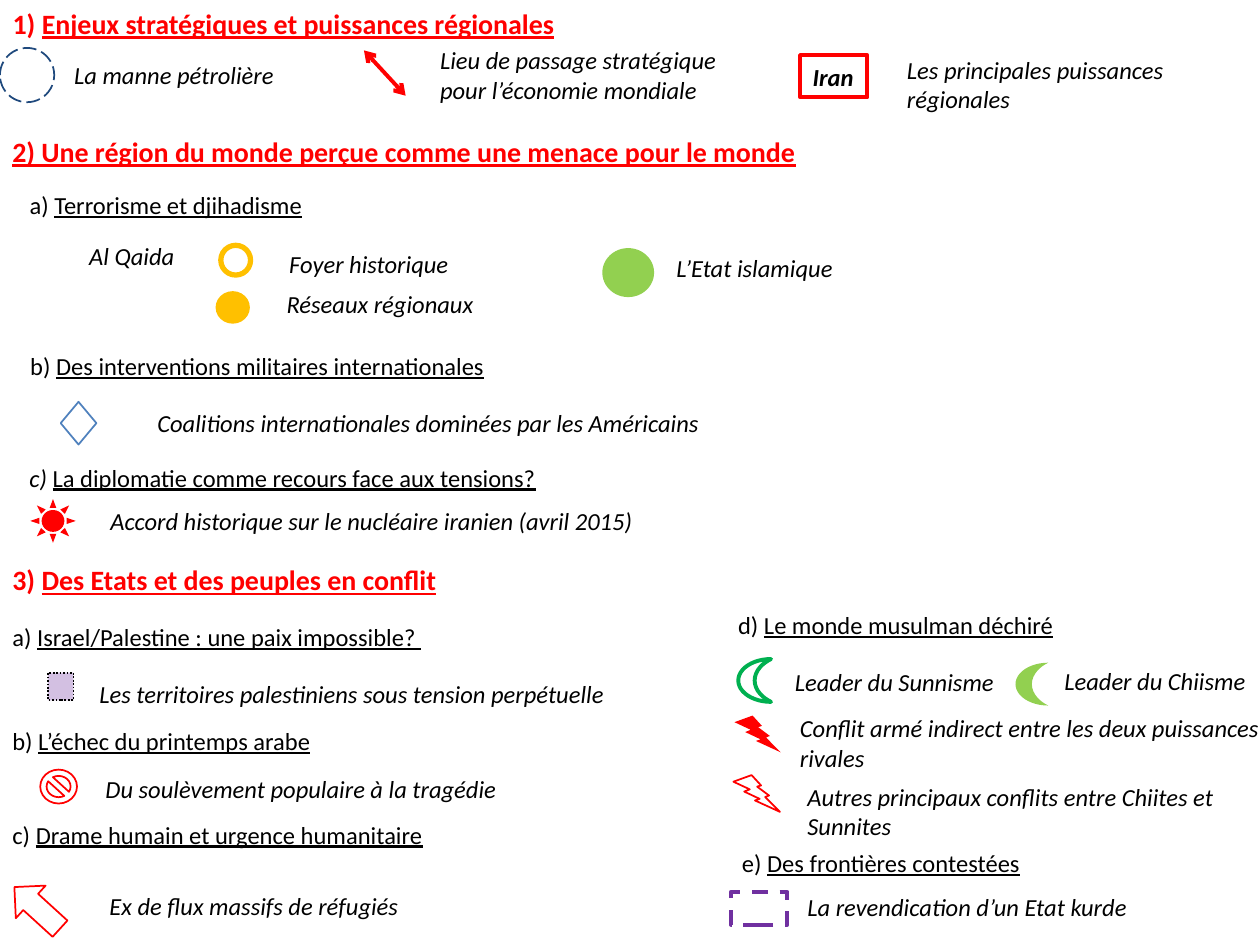
import lxml.etree
import pptx
import pptx.dml.color
import pptx.enum.dml
import pptx.enum.shapes
import pptx.enum.text
import pptx.oxml.ns
import pptx.util

Pt = pptx.util.Pt
RGBColor = pptx.dml.color.RGBColor
SHAPE = pptx.enum.shapes.MSO_SHAPE
DASH = pptx.enum.dml.MSO_LINE
qn = pptx.oxml.ns.qn

BLACK = RGBColor(0x00, 0x00, 0x00)
RED = RGBColor(0xFF, 0x00, 0x00)
NAVY = RGBColor(0x1F, 0x49, 0x7D)
BLUE = RGBColor(0x4F, 0x81, 0xBD)
AMBER = RGBColor(0xFF, 0xC0, 0x00)
LIME = RGBColor(0x92, 0xD0, 0x50)
GREEN = RGBColor(0x00, 0xB0, 0x50)
PURPLE = RGBColor(0x70, 0x30, 0xA0)

FONT = "Calibri"
TEXT_SIZE, HEADING_SIZE = 14, 16
LINE_HEIGHT, TWO_LINES, HEADING_HEIGHT = 24.2, 41.2, 26.6


def place(shape, box, left, top, width, height):
    """Set the shape's position, counted from the corner of the box."""
    shape.left, shape.top = Pt(box[0] + left), Pt(box[1] + top)
    shape.width, shape.height = Pt(width), Pt(height)


def style(paragraph, size=TEXT_SIZE, color=BLACK, bold=False, italic=False):
    font = paragraph.font
    font.name, font.size, font.bold, font.italic = FONT, Pt(size), bold, italic
    font.color.rgb = color


def add_text(slide, box, left, top, width, height=LINE_HEIGHT, wrap=False):
    shape = slide.shapes.add_textbox(0, 0, 0, 0)
    place(shape, box, left, top, width, height)
    shape.text_frame.word_wrap = wrap
    return shape.text_frame


def add_label(slide, box, left, top, width, text, height=LINE_HEIGHT, wrap=False):
    """Add the italic explanation of a symbol."""
    frame = add_text(slide, box, left, top, width, height, wrap)
    frame.text = text
    for paragraph in frame.paragraphs:
        style(paragraph, italic=True)


def write_numbered(paragraph, number, text):
    paragraph.add_run().text = number + " "
    run = paragraph.add_run()
    run.text = text
    run.font.underline = True


def add_subheading(slide, box, left, top, width, number, text):
    paragraph = add_text(slide, box, left, top, width).paragraphs[0]
    style(paragraph)
    write_numbered(paragraph, number, text)
    return paragraph


def add_heading(slide, box, width, number, text):
    paragraph = add_text(slide, box, 0, 0, width, HEADING_HEIGHT).paragraphs[0]
    style(paragraph, HEADING_SIZE, RED, bold=True)
    write_numbered(paragraph, number, text)
    return paragraph


def add_symbol(slide, box, kind, left, top, width, height,
               fill=None, line=None, weight=1, dash=None):
    shape = slide.shapes.add_shape(kind, 0, 0, 0, 0)
    place(shape, box, left, top, width, height)
    shape.shadow.inherit = False
    if fill is None:
        shape.fill.background()
    else:
        shape.fill.solid()
        shape.fill.fore_color.rgb = fill
    if line is None:
        shape.line.fill.background()
    else:
        shape.line.color.rgb = line
        shape.line.width = Pt(weight)
        if dash is not None:
            shape.line.dash_style = dash
    return shape


def add_double_arrow(slide, box, start, end):
    left, top = box[:2]
    arrow = slide.shapes.add_connector(
        pptx.enum.shapes.MSO_CONNECTOR.STRAIGHT,
        Pt(left + start[0]), Pt(top + start[1]), Pt(left + end[0]), Pt(top + end[1]))
    arrow.line.color.rgb = RED
    arrow.line.width = Pt(2.25)
    for tag in ("a:headEnd", "a:tailEnd"):
        lxml.etree.SubElement(arrow.line._get_or_add_ln(), qn(tag), type="arrow")
    lxml.etree.SubElement(arrow._element.spPr, qn("a:effectLst"))


def add_title(slide, box, width, number, text):
    title = slide.shapes.title
    place(title, box, 0, 0, width, HEADING_HEIGHT)
    frame = title.text_frame
    frame.word_wrap = False
    frame.auto_size = pptx.enum.text.MSO_AUTO_SIZE.NONE
    frame.vertical_anchor = pptx.enum.text.MSO_ANCHOR.TOP
    paragraph = frame.paragraphs[0]
    paragraph.alignment = pptx.enum.text.PP_ALIGN.LEFT
    style(paragraph, HEADING_SIZE, RED, bold=True)
    write_numbered(paragraph, number, text)


def add_regional_powers(slide, box):
    add_title(slide, box, 327.6, "1)", "Enjeux stratégiques et puissances régionales")
    add_symbol(slide, box, SHAPE.OVAL, 0, 27.4, 31, 31, line=NAVY, dash=DASH.LONG_DASH)
    add_label(slide, box, 35.3, 31, 129.6, "La manne pétrolière")
    add_double_arrow(slide, box, (208, 28.8), (231.8, 54.7))
    add_label(slide, box, 244.4, 22.3, 177,
              "Lieu de passage stratégique\npour l’économie mondiale", TWO_LINES)
    country = add_symbol(slide, box, SHAPE.RECTANGLE, 457.2, 31.5, 38.4, LINE_HEIGHT,
                         line=RED, weight=2.25)
    country.text_frame.word_wrap = False
    country.text_frame.text = "Iran"
    style(country.text_frame.paragraphs[0], bold=True, italic=True)
    add_label(slide, box, 511.2, 27.6, 208.8,
              "Les principales puissances régionales", TWO_LINES, wrap=True)


def add_perceived_threat(slide, box):
    heading = add_heading(slide, box, 527.8, "2)",
                          "Une région du monde perçue comme une menace pour le monde")
    heading.runs[0].font.underline = True

    add_subheading(slide, box, 9.8, 31.7, 170.6, "a)", "Terrorisme et djihadisme")
    add_label(slide, box, 43.9, 61, 64, "Al Qaida")
    add_symbol(slide, box, SHAPE.OVAL, 126.2, 66.8, 17, 17, line=AMBER, weight=3)
    add_label(slide, box, 158.2, 65.6, 105.8, "Foyer historique")
    add_symbol(slide, box, SHAPE.OVAL, 123.2, 93, 19.6, 18.6, fill=AMBER)
    add_label(slide, box, 156.7, 88, 122.4, "Réseaux régionaux")
    add_symbol(slide, box, SHAPE.OVAL, 344.2, 68.4, 29.6, 28, fill=LIME)
    add_label(slide, box, 379.5, 67.8, 105, "L’Etat islamique")

    add_subheading(slide, box, 10.2, 123.7, 437, "b)",
                   "Des interventions militaires internationales")
    add_symbol(slide, box, SHAPE.DIAMOND, 34.7, 156.2, 20.4, 24.4, line=BLUE)
    add_label(slide, box, 82.8, 156.4, 330.5,
              "Coalitions internationales dominées par les Américains")

    diplomacy = add_subheading(slide, box, 9.7, 187.4, 359.3, "c)",
                               "La diplomatie comme recours face aux tensions?")
    diplomacy.runs[0].font.italic = True
    add_symbol(slide, box, SHAPE.SUN, 17.3, 211.8, 26, 25, fill=RED)
    add_label(slide, box, 56, 212, 381,
              "Accord historique sur le nucléaire iranien (avril 2015)", TWO_LINES, wrap=True)


def add_conflicts(slide, box):
    add_heading(slide, box, 260, "3)", "Des Etats et des peuples en conflit")

    add_subheading(slide, box, 0, 33.7, 250.6, "a)",
                   "Israel/Palestine : une paix impossible? ")
    territory = add_symbol(slide, box, SHAPE.RECTANGLE, 27.4, 66.2, 14.6, 15.8,
                           fill=PURPLE, line=BLACK, dash=DASH.ROUND_DOT)
    color = territory._element.spPr.find(qn("a:solidFill")).find(qn("a:srgbClr"))
    lxml.etree.SubElement(color, qn("a:alpha"), val="30000")
    add_label(slide, box, 49.7, 66.4, 305.3,
              "Les territoires palestiniens sous tension perpétuelle")

    add_subheading(slide, box, 0, 93, 188, "b)", "L’échec du printemps arabe")
    add_symbol(slide, box, SHAPE.NO_SYMBOL, 23, 121.6, 21, 19.4, line=RED)
    add_label(slide, box, 53.2, 120.8, 239.8, "Du soulèvement populaire à la tragédie")

    add_subheading(slide, box, 0, 146.6, 251.3, "c)",
                   "Drame humain et urgence humanitaire")
    arrow = add_symbol(slide, box, SHAPE.RIGHT_ARROW, 3.6, 188, 35.3, 25.2, line=RED)
    arrow.rotation = 222.4
    add_label(slide, box, 55.5, 187.2, 182.2, "Ex de flux massifs de réfugiés")


def add_divided_world(slide, box):
    add_subheading(slide, box, 0, 0, 194.4, "d)", "Le monde musulman déchiré")
    add_symbol(slide, box, SHAPE.MOON, 7.2, 31.7, 18.7, 24.5, line=GREEN, weight=2.25)
    add_label(slide, box, 32.4, 32.6, 129.6, "Leader du Sunnisme")
    add_symbol(slide, box, SHAPE.MOON, 165.6, 33.8, 18.7, 24.5, fill=LIME)
    add_label(slide, box, 186.4, 32, 118.8, "Leader du Chiisme")
    add_symbol(slide, box, SHAPE.LIGHTNING_BOLT, 5, 64, 26.4, 21, fill=RED)
    add_label(slide, box, 35.3, 59.2, 284.4,
              "Conflit armé indirect entre les deux puissances rivales", TWO_LINES, wrap=True)
    add_symbol(slide, box, SHAPE.LIGHTNING_BOLT, 4.4, 98, 26.6, 21, line=RED)
    add_label(slide, box, 39.6, 98.4, 247.7,
              "Autres principaux conflits entre Chiites et Sunnites", TWO_LINES, wrap=True)

    add_subheading(slide, box, 2.2, 136, 175, "e)", "Des frontières contestées")
    add_symbol(slide, box, SHAPE.RECTANGLE, 2.9, 164.8, 32.4, 18.7,
               line=PURPLE, weight=2.25, dash=DASH.DASH)
    add_label(slide, box, 39.6, 161.3, 198.7, "La revendication d’un Etat kurde")


def main():
    presentation = pptx.Presentation()
    presentation.slide_width, presentation.slide_height = Pt(720), Pt(540)
    slide = presentation.slides.add_slide(presentation.slide_layouts[5])
    add_regional_powers(slide, (0, 0, 720, 73.4))
    add_perceived_threat(slide, (0, 73.4, 720, 244.8))
    add_conflicts(slide, (0, 318.2, 414.7, 221.8))
    add_divided_world(slide, (414.7, 344.9, 305.3, 195.1))
    presentation.save("out.pptx")


if __name__ == "__main__":
    main()
